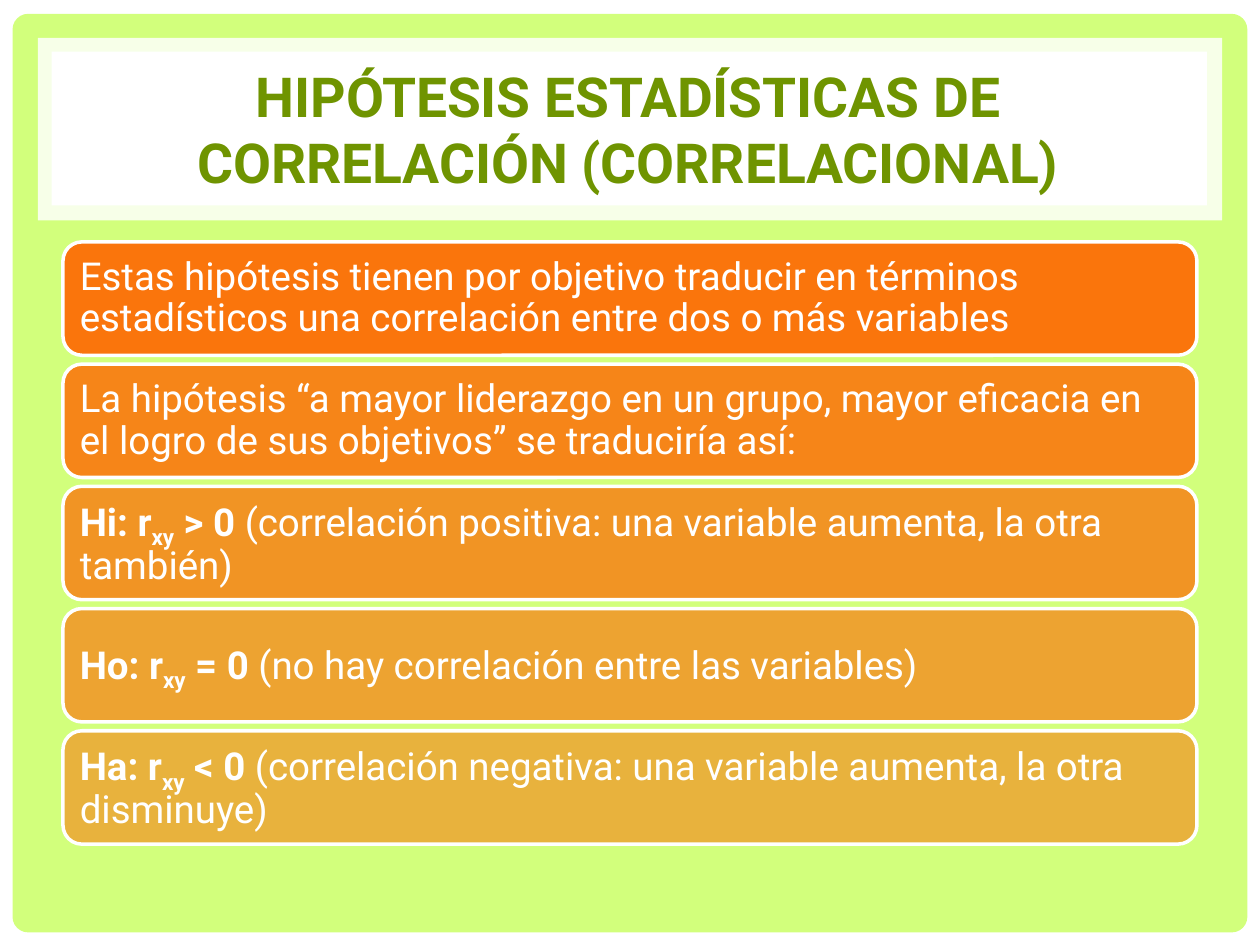
import pptx
import pptx.util
import pptx.dml.color
import pptx.enum.shapes
import pptx.enum.text
import pptx.oxml.ns
import lxml.etree

# Content: each box is a list of (text, style) runs
TITLE = "HIPÓTESIS ESTADÍSTICAS DE CORRELACIÓN (CORRELACIONAL)"
BOXES = [
    [("Estas hipótesis tienen por objetivo traducir en términos estadísticos "
      "una correlación entre dos o más variables", "plain")],
    [("La hipótesis “a mayor liderazgo en un grupo, mayor eficacia en el logro "
      "de sus objetivos” se traduciría así:", "plain")],
    [("Hi: r", "bold"), ("xy", "subscript"), (" > 0 ", "bold"),
     ("(correlación positiva: una variable aumenta, la otra también)", "plain")],
    [("Ho: r", "bold"), ("xy", "subscript"), (" = 0 ", "bold"),
     ("(no hay correlación entre las variables)", "plain")],
    [("Ha: r", "bold"), ("xy", "subscript"), (" < 0 ", "bold"),
     ("(correlación negativa: una variable aumenta, la otra disminuye)", "plain")],
]

# Design
FONT = "Roboto"
WHITE, LIME, GREEN, ORANGE = "FFFFFF", "D2FF7C", "6F9400", "FF6700"
WIDTH, HEIGHT = 10, 7.5
BOX_TOP, BOX_HEIGHT, BOX_PITCH = 1.92, 0.9, 0.97
BOX_MARGIN = 0.05 * WIDTH
FIRST_OPACITY, OPACITY_STEP = 90, 10
RECTANGLE = pptx.enum.shapes.MSO_SHAPE.RECTANGLE
ROUNDED = pptx.enum.shapes.MSO_SHAPE.ROUNDED_RECTANGLE


def color(value):
    return pptx.dml.color.RGBColor.from_string(value)


def add_panel(slide, kind, left, top, width, height, fill, opacity=100):
    shape = slide.shapes.add_shape(
        kind, *(pptx.util.Inches(v) for v in (left, top, width, height)))
    shape.shadow.inherit = False
    shape.line.fill.background()
    shape.fill.solid()
    shape.fill.fore_color.rgb = color(fill)
    if opacity < 100:
        fill_color = shape.element.spPr.find(".//" + pptx.oxml.ns.qn("a:srgbClr"))
        lxml.etree.SubElement(fill_color, pptx.oxml.ns.qn("a:alpha"),
                              val=str(opacity * 1000))
    return shape


def set_frame(frame, inset):
    frame.word_wrap = True
    frame.auto_size = pptx.enum.text.MSO_AUTO_SIZE.NONE
    frame.vertical_anchor = pptx.enum.text.MSO_ANCHOR.MIDDLE
    frame.margin_left = frame.margin_right = pptx.util.Inches(inset)
    frame.margin_top = frame.margin_bottom = pptx.util.Inches(inset)


def set_font(run, size, text_color, bold):
    run.font.name = FONT
    run.font.size = pptx.util.Pt(size)
    run.font.color.rgb = color(text_color)
    run.font.bold = bold


def add_text_box(slide, row, runs):
    box = add_panel(slide, ROUNDED, BOX_MARGIN, BOX_TOP + row * BOX_PITCH,
                    WIDTH - 2 * BOX_MARGIN, BOX_HEIGHT, ORANGE,
                    FIRST_OPACITY - row * OPACITY_STEP)
    box.line.color.rgb = color(WHITE)
    box.line.width = pptx.util.Pt(2)
    set_frame(box.text_frame, 0.09)
    paragraph = box.text_frame.paragraphs[0]
    paragraph.alignment = pptx.enum.text.PP_ALIGN.LEFT
    paragraph.line_spacing = 0.9
    for text, style in runs:
        run = paragraph.add_run()
        run.text = text
        set_font(run, 22, WHITE, style != "plain")
        if style == "subscript":
            run.font._element.set("baseline", "-25000")


def add_title(slide):
    title = slide.shapes.title
    title.left, title.top, title.width, title.height = (
        pptx.util.Inches(v) for v in (0.47, 0.45, 9.03, 1.14))
    title.text_frame.text = TITLE
    set_frame(title.text_frame, 0.05)
    paragraph = title.text_frame.paragraphs[0]
    paragraph.alignment = pptx.enum.text.PP_ALIGN.CENTER
    set_font(paragraph.runs[0], 31.5, GREEN, True)
    # Bring the title in front of its frame
    title.element.getparent().append(title.element)


def main():
    presentation = pptx.Presentation()
    presentation.slide_width = pptx.util.Inches(WIDTH)
    presentation.slide_height = pptx.util.Inches(HEIGHT)
    slide = presentation.slides.add_slide(presentation.slide_layouts[5])

    # Background and title frame
    slide.background.fill.solid()
    slide.background.fill.fore_color.rgb = color(WHITE)
    backdrop = add_panel(slide, ROUNDED, 0.1, 0.11, 9.8, 7.29, LIME)
    backdrop.adjustments[0] = 0.017
    add_panel(slide, RECTANGLE, 0.3, 0.3, 9.4, 1.45, WHITE, 83)
    add_panel(slide, RECTANGLE, 0.41, 0.41, 9.17, 1.22, WHITE)
    add_title(slide)

    # Stacked boxes, fading downwards
    for row, runs in enumerate(BOXES):
        add_text_box(slide, row, runs)

    presentation.save("out.pptx")


if __name__ == "__main__":
    main()
